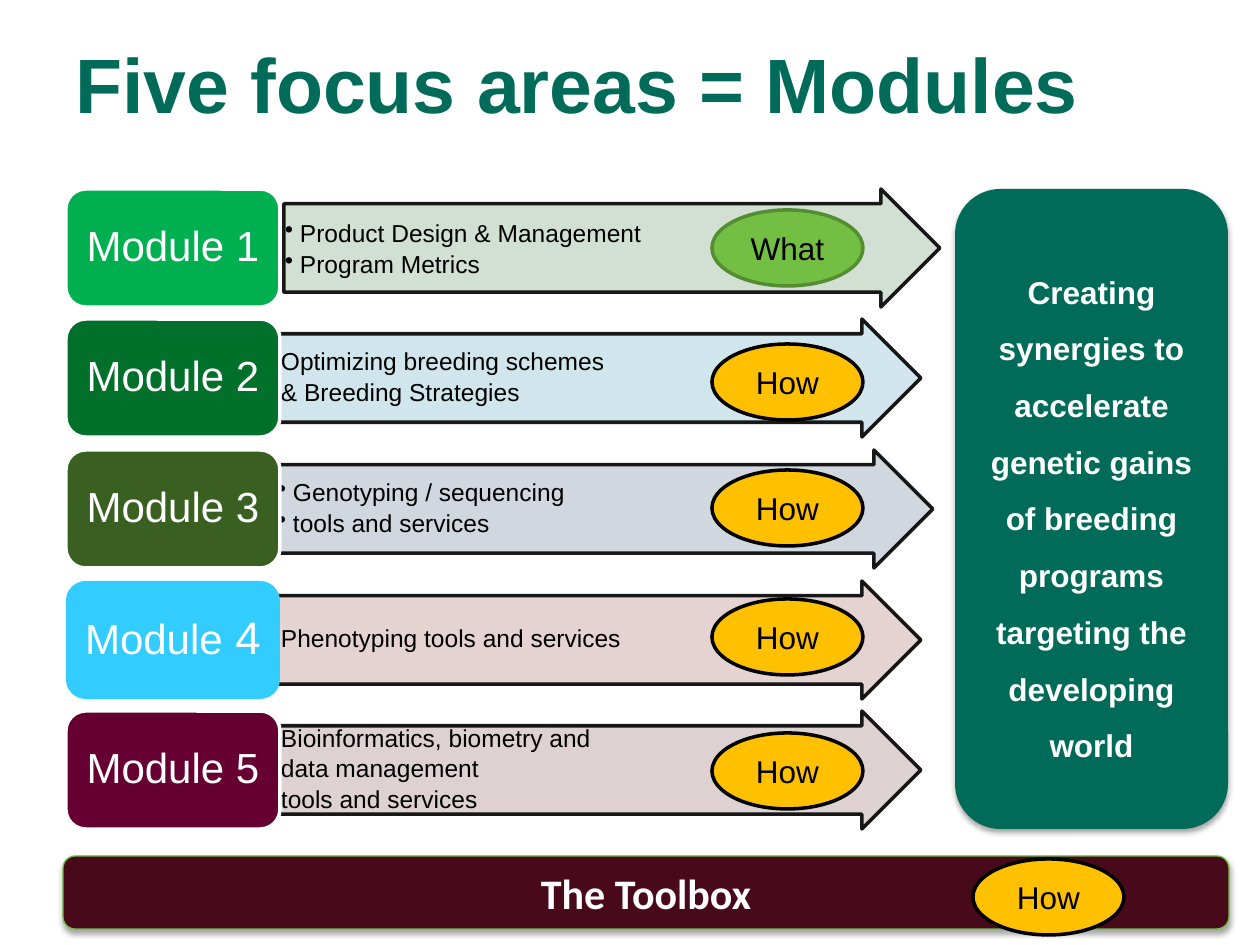
from lxml import etree
from pptx import Presentation
from pptx.dml.color import RGBColor
from pptx.enum.shapes import MSO_SHAPE
from pptx.enum.text import MSO_ANCHOR, PP_ALIGN
from pptx.oxml import parse_xml
from pptx.oxml.ns import qn
from pptx.util import Emu, Pt

ROUNDED, ARROW, OVAL = MSO_SHAPE.ROUNDED_RECTANGLE, MSO_SHAPE.RIGHT_ARROW, MSO_SHAPE.OVAL
MIDDLE = MSO_ANCHOR.MIDDLE
LEFT, CENTER = PP_ALIGN.LEFT, PP_ALIGN.CENTER
NAMESPACE = "http://schemas.openxmlformats.org/drawingml/2006/main"
PX_PER_INCH = 126

COLORS = {
    "white": "FFFFFF", "black": "000000", "teal": "006B59",
    "toolbox": "48091B", "toolbox_line": "6FBE3F",
    "what": "72BF44", "what_line": "548D32", "how": "FFC000",
    "module1": "00B050", "module2": "00702B", "module3": "396021",
    "module4": "33CCFF", "module5": "660033",
    "arrow1": "CCDDCE", "arrow2": "CCE3EB", "arrow3": "CCD3DC",
    "arrow4": "E3CFCD", "arrow5": "DBCCCE",
}

# Arrow left, badge top, text shift down, badge word, lines
MODULES = [
    (284, 210, 2, "What", ["Product Design & Management", "Program Metrics"]),
    (265, 344, 0, "How", ["Optimizing breeding schemes", "& Breeding Strategies"]),
    (277, 470, 0, "How", ["Genotyping / sequencing", "tools and services"]),
    (265, 599, 0, "How", ["Phenotyping tools and services"]),
    (265, 733, 0, "How", ["Bioinformatics, biometry and", "data management",
                          "tools and services"]),
]


def px(value):
    return Emu(round(value * 914400 / PX_PER_INCH))


def rgb(name):
    return RGBColor.from_string(COLORS[name])


def add_block(page, kind, box, fill, line=None, line_width=2):
    shape = page.shapes.add_shape(kind, *map(px, box))
    shape.shadow.inherit = False
    shape.fill.solid()
    shape.fill.fore_color.rgb = rgb(fill)
    if line:
        shape.line.color.rgb = rgb(line)
        shape.line.width = Pt(line_width)
    else:
        shape.line.fill.background()
    return shape


def set_text(shape, text, size, color, bold=False, font="Arial", align=CENTER,
             spacing=None, inset=None):
    frame = shape.text_frame
    frame.word_wrap = True
    frame.vertical_anchor = MIDDLE
    if inset is not None:
        frame.margin_left = frame.margin_right = px(inset)
        frame.margin_top = frame.margin_bottom = px(inset)
    frame.text = text
    for para in frame.paragraphs:
        para.alignment = align
        if spacing:
            para.line_spacing = spacing
        for span in para.runs:
            span.font.name = font
            span.font.size = Pt(size)
            span.font.bold = bold
            span.font.color.rgb = rgb(color)
    return frame


def add_soft_shadow(shape):
    effects = shape._element.spPr.find(qn("a:effectLst"))
    effects.append(parse_xml(
        f'<a:outerShdw xmlns:a="{NAMESPACE}" blurRad="{Pt(3.1)}" dist="{Pt(1.8)}" '
        'dir="5400000" rotWithShape="0"><a:srgbClr val="000000">'
        '<a:alpha val="35000"/></a:srgbClr></a:outerShdw>'))


def make_translucent(shape, percent):
    for color in shape._element.spPr.iter(qn("a:srgbClr")):
        etree.SubElement(color, qn("a:alpha")).set("val", str(percent * 1000))


def add_bullet(para, indent):
    properties = para._p.get_or_add_pPr()
    properties.set("marL", str(px(indent)))
    properties.set("indent", str(-px(indent)))
    etree.SubElement(properties, qn("a:buChar")).set("char", "•")


def add_title(page, box):
    title = page.shapes.add_textbox(*map(px, box))
    set_text(title, "Five focus areas = Modules", 44, "teal", bold=True,
             align=LEFT, spacing=0.9)


def add_badge(page, left, top, word):
    fill, line = ("what", "what_line") if word == "What" else ("how", "black")
    badge = add_block(page, OVAL, (left, top, 151, 76), fill, line)
    set_text(badge, word, 18, "black")


def add_module(page, box, number, arrow_left, text_shift, lines):
    left, top, width, height = box
    # Arrow with its bullet lines
    arrow = add_block(page, ARROW, (arrow_left, top, 656, height), f"arrow{number}", "black")
    arrow.adjustments[0], arrow.adjustments[1] = 0.75, 0.5
    make_translucent(arrow, 90)
    details = page.shapes.add_textbox(
        *map(px, (arrow_left, top + 15 + text_shift, 612, height - 30)))
    frame = set_text(details, "\n".join(lines), 14, "black", align=LEFT,
                     spacing=0.9, inset=1)
    for para in frame.paragraphs:
        add_bullet(para, 15)
        para.space_after = Pt(2.4)

    # Module label
    outline = None if number == 4 else "white"
    label = add_block(page, ROUNDED, (left, top, width, height), f"module{number}", outline)
    frame = set_text(label, f"Module {number}", 24, "white", spacing=0.9, inset=0)
    if number == 4:
        para = frame.paragraphs[0]
        para.runs[0].text = "Module"
        digit = para.add_run()
        digit.text = " 4"
        digit.font.name = "Arial"
        digit.font.size = Pt(26)
        digit.font.color.rgb = rgb("white")


def add_modules(page, box):
    left, top, width, height = box
    row_height = 118
    pitch = (height - row_height) / (len(MODULES) - 1)
    for index, (arrow_left, _, shift, _, lines) in enumerate(MODULES):
        row = (left, top + round(index * pitch), width, row_height)
        add_module(page, row, index + 1, arrow_left, shift, lines)


def add_goal(page, box):
    panel = add_block(page, ROUNDED, box, "teal")
    add_soft_shadow(panel)
    set_text(panel, "Creating synergies to accelerate genetic gains of breeding "
             "programs targeting the developing world", 18, "white", bold=True, spacing=1.5)


def add_toolbox(page, box):
    bar = add_block(page, ROUNDED, box, "toolbox", "toolbox_line", 0.75)
    add_soft_shadow(bar)
    set_text(bar, "The Toolbox", 24, "white", bold=True, font="Calibri")
    add_badge(page, box[0] + 910, box[1] + 3, "How")


def main():
    deck = Presentation()
    deck.slide_width, deck.slide_height = px(1260), px(945)
    page = deck.slides.add_slide(deck.slide_layouts[6])
    add_title(page, (63, 10, 1134, 158))
    add_modules(page, (66, 189, 214, 640))
    add_goal(page, (955, 189, 273, 640))
    add_toolbox(page, (63, 856, 1166, 73))
    # Badges on the arrows
    for _, badge_top, _, word, _ in MODULES:
        add_badge(page, 712, badge_top, word)
    deck.save("out.pptx")


if __name__ == "__main__":
    main()
